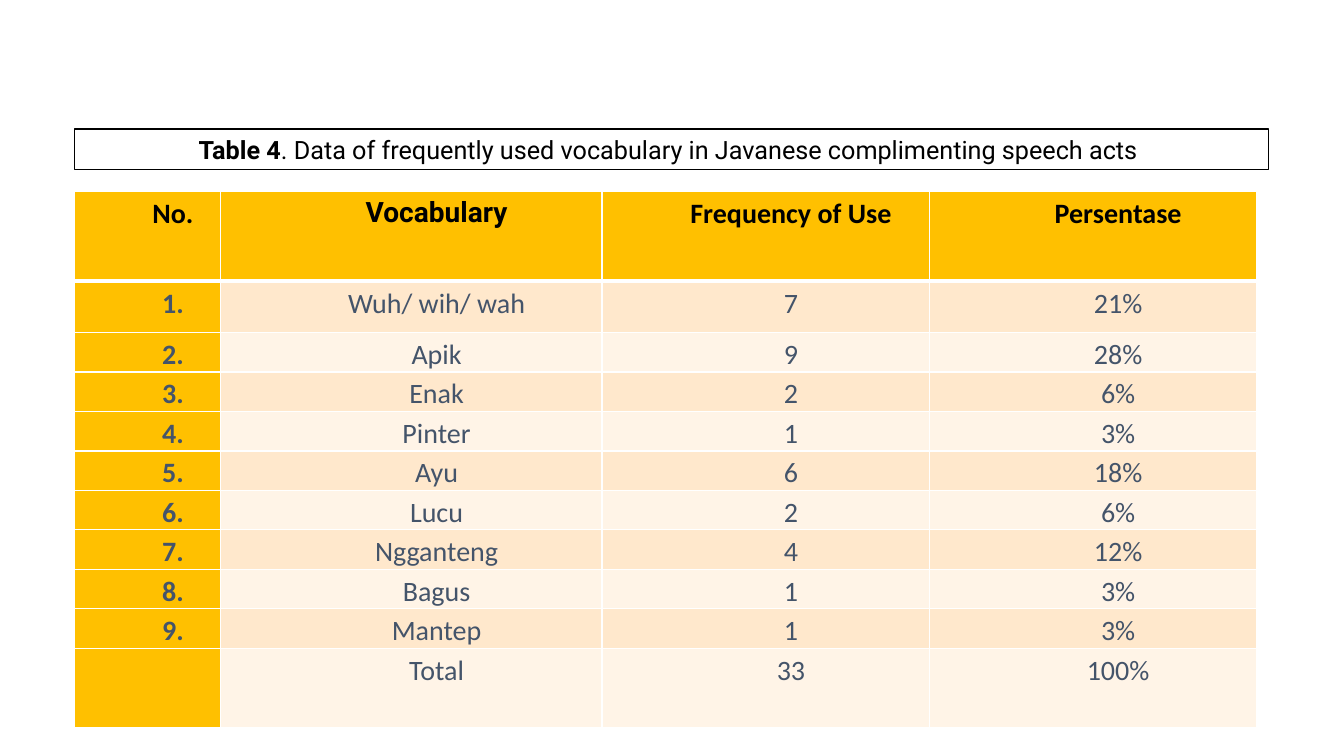
from lxml.etree import SubElement
from pptx import Presentation
from pptx.dml.color import RGBColor
from pptx.enum.shapes import MSO_SHAPE as Preset
from pptx.enum.text import MSO_ANCHOR as Anchor, PP_ALIGN as Align
from pptx.oxml.ns import qn
from pptx.util import Inches, Pt

BLACK, WHITE, SLATE = "000000", "FFFFFF", "44546A"
GOLD, PEACH, CREAM = "FFC000", "FFE8CC", "FFF4E7"

HEADINGS = ["No.", "Vocabulary", "Frequency of Use", "Persentase"]
WORDS = [
    ("Wuh/ wih/ wah", "7", "21%"),
    ("Apik", "9", "28%"),
    ("Enak", "2", "6%"),
    ("Pinter", "1", "3%"),
    ("Ayu", "6", "18%"),
    ("Lucu", "2", "6%"),
    ("Ngganteng", "4", "12%"),
    ("Bagus", "1", "3%"),
    ("Mantep", "1", "3%"),
]
TOTAL = ["", "Total", "33", "100%"]
COLUMN_WIDTHS = [1.45, 3.78, 3.25, 3.24]
ROW_HEIGHTS = [0.89, 0.51] + [0.38] * 8 + [0.79]


def color(value):
    return RGBColor.from_string(value)


class VocabularySlide:
    def __init__(self, page):
        self.page = page
        self.body_font = "Calibri"
        self.accent_font = "Roboto"

    def style(self, font, name, size, ink, bold):
        font.name = name
        font.size = Pt(size)
        font.color.rgb = color(ink)
        font.bold = bold

    def caption(self, left, top, width, height, label, text):
        box = self.page.shapes.add_shape(
            Preset.RECTANGLE, Inches(left), Inches(top), Inches(width), Inches(height))
        box.shadow.inherit = False
        box.fill.solid()
        box.fill.fore_color.rgb = color(WHITE)
        box.line.color.rgb = color(BLACK)
        box.line.width = Pt(1)
        frame = box.text_frame
        frame.word_wrap = True
        frame.vertical_anchor = Anchor.TOP
        para = frame.paragraphs[0]
        para.alignment = Align.CENTER
        for content, bold in ((label, True), (text, False)):
            span = para.add_run()
            span.text = content
            self.style(span.font, self.accent_font, 18, BLACK, bold)

    def border(self, cell, side, width):
        line = SubElement(cell._tc.get_or_add_tcPr(), qn(f"a:ln{side}"), w=str(Pt(width)))
        fill = SubElement(line, qn("a:solidFill"))
        SubElement(fill, qn("a:srgbClr"), val=WHITE)

    def cell(self, cell, text, fill, ink, bold, font, top, bottom):
        for side, width in (("L", 1), ("R", 1), ("T", top), ("B", bottom)):
            self.border(cell, side, width)
        cell.fill.solid()
        cell.fill.fore_color.rgb = color(fill)
        cell.margin_left = cell.margin_right = Inches(0.06)
        cell.margin_top = cell.margin_bottom = 0
        para = cell.text_frame.paragraphs[0]
        para.text = text
        para.alignment = Align.CENTER
        para.line_spacing = 1.15
        para.space_after = Pt(10)
        para._p.get_or_add_pPr().set("marL", str(Inches(0.5)))
        self.style(para.font, font, 20, ink, bold)
        for span in para.runs:
            self.style(span.font, font, 20, ink, bold)

    def table(self, left, top, rows):
        table = self.page.shapes.add_table(
            len(rows), len(COLUMN_WIDTHS), Inches(left), Inches(top),
            Inches(sum(COLUMN_WIDTHS)), Inches(sum(ROW_HEIGHTS))).table
        table.first_row = table.horz_banding = False
        for column, width in zip(table.columns, COLUMN_WIDTHS):
            column.width = Inches(width)
        for row, height in zip(table.rows, ROW_HEIGHTS):
            row.height = Inches(height)
        for r, values in enumerate(rows):
            for c, text in enumerate(values):
                heading = r == 0
                emphasis = heading or c == 0
                fill = GOLD if emphasis else (PEACH if r % 2 else CREAM)
                font = self.accent_font if text == "Vocabulary" else self.body_font
                self.cell(table.cell(r, c), text, fill, BLACK if heading else SLATE,
                          emphasis, font, 3 if r == 1 else 1, 3 if heading else 1)


def main():
    deck = Presentation()
    deck.slide_width, deck.slide_height = Inches(13.33), Inches(7.5)
    slide = VocabularySlide(deck.slides.add_slide(deck.slide_layouts[6]))
    slide.caption(0.74, 1.28, 11.84, 0.4, "Table 4",
                  ". Data of frequently used vocabulary in Javanese complimenting speech acts ")
    numbered = [[f"{number}.", *word] for number, word in enumerate(WORDS, 1)]
    slide.table(0.74, 1.9, [HEADINGS, *numbered, TOTAL])
    deck.save("out.pptx")


if __name__ == "__main__":
    main()
